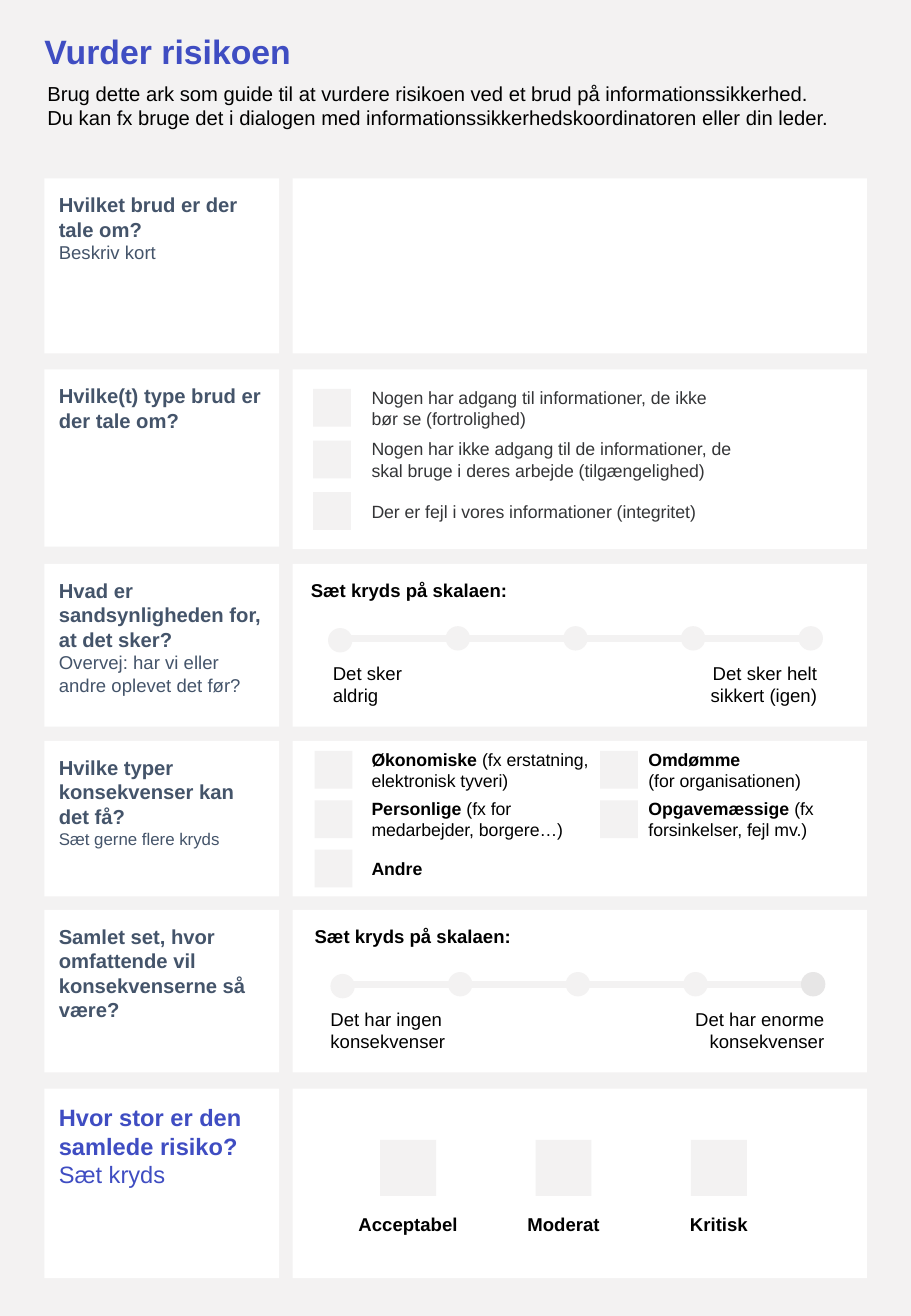
"""Builds a one-page Danish worksheet for judging the risk of a security breach."""
from lxml.etree import SubElement
from pptx import Presentation
from pptx.dml.color import RGBColor as Rgb
from pptx.enum.shapes import MSO_CONNECTOR as Link, MSO_SHAPE as Kind
from pptx.enum.text import MSO_ANCHOR as Anchor, PP_ALIGN as Align
from pptx.oxml.ns import qn
from pptx.util import Cm, Pt

HUE = {"page": "F3F2F2", "card": "FFFFFF", "blue": "3F4DC2", "slate": "44546A",
       "ink": "000000", "grey": "343537", "last": "E7E6E6"}
FONT = "Arial"
PAGE = (19.05, 27.51)
TITLE = "Vurder risikoen"
INTRO = ("Brug dette ark som guide til at vurdere risikoen ved et brud på "
         "informationssikkerhed. Du kan fx bruge det i dialogen med "
         "informationssikkerhedskoordinatoren eller din leder.")

# top, left height, right height, colour, question, size, hint, size
ROWS = [
    (3.73, 3.66, 3.66, "slate", "Hvilket brud er der tale om?", 12, "Beskriv kort", 11),
    (7.72, 3.71, 3.76, "slate", "Hvilke(t) type brud er der tale om?", 12, "", 0),
    (11.79, 3.4, 3.4, "slate", "Hvad er sandsynligheden for, at det sker?", 12,
     "Overvej: har vi eller andre oplevet det før?", 11),
    (15.49, 3.25, 3.25, "slate", "Hvilke typer konsekvenser kan det få?", 12,
     "Sæt gerne flere kryds", 10),
    (19.02, 3.4, 3.4, "slate", "Samlet set, hvor omfattende vil konsekvenserne så være?",
     12, "", 0),
    (22.76, 3.96, 3.96, "blue", "Hvor stor er den samlede risiko?", 14, "Sæt kryds", 14),
]
BREACH = [
    ("Nogen har adgang til informationer, de ikke bør se (fortrolighed)", 7.19),
    ("Nogen har ikke adgang til de informationer, de skal bruge i deres arbejde "
     "(tilgængelighed)", 8.03),
    ("Der er fejl i vores informationer (integritet)", 8.53),
]
EFFECTS = [
    (6.58, 7.77, 4.83, [
        [[("Økonomiske", True), (" (fx erstatning, elektronisk tyveri)", False)]],
        [[("Personlige", True), (" (fx for medarbejder, borgere…)", False)]],
        [[("Andre", True)]]]),
    (12.55, 13.56, 3.81, [
        [[("Omdømme", True)], [("(for organisationen)", False)]],
        [[("Opgavemæssige", True), (" (fx forsinkelser, fejl mv.)", False)]]]),
]
SCALE = "Sæt kryds på skalaen:"
# row top, first dot, heading left, low text, left, width, high text, left, last dot
SCALES = [
    (11.79, 6.86, 6.5, "Det sker aldrig", 6.96, 1.85,
     "Det sker helt sikkert (igen)", 14.25, "page"),
    (19.02, 6.91, 6.58, "Det har ingen konsekvenser", 6.91, 2.51,
     "Det har enorme konsekvenser", 14.4, "last"),
]
GRADES = ["Acceptabel", "Moderat", "Kritisk"]

deck = Presentation()
deck.slide_width, deck.slide_height = map(Cm, PAGE)
slide = deck.slides.add_slide(deck.slide_layouts[6])
slide.background.fill.solid()
slide.background.fill.fore_color.rgb = Rgb.from_string(HUE["page"])
shapes = slide.shapes


def draw(x, y, w, h, hue="page", kind=Kind.RECTANGLE):
    shape = shapes.add_shape(kind, Cm(x), Cm(y), Cm(w), Cm(h))
    shape.shadow.inherit = False
    shape.fill.solid()
    shape.fill.fore_color.rgb = Rgb.from_string(HUE[hue])
    shape.line.fill.background()
    return shape


def write(text, at=None, shape=None, size=11, hue="ink", bold=False,
          align=Align.LEFT, anchor=Anchor.TOP, inset=(0, 0, 0, 0), space=None):
    paras = [[(text, bold)]] if isinstance(text, str) else text
    frame = (shape or shapes.add_textbox(*map(Cm, at))).text_frame
    frame.word_wrap = True
    frame.vertical_anchor = anchor
    (frame.margin_left, frame.margin_top,
     frame.margin_right, frame.margin_bottom) = map(Cm, inset)
    for i, runs in enumerate(paras):
        para = frame.add_paragraph() if i else frame.paragraphs[0]
        para.alignment = align
        if space:
            para.line_spacing = space
        for words, heavy, *own in runs:
            run = para.add_run()
            run.text = words
            run.font.name = FONT
            run.font.size = Pt(own[0] if own else size)
            run.font.bold = heavy
            run.font.color.rgb = Rgb.from_string(HUE[hue])


def check(x, y, left, width, text, **form):
    side, tall = 0.79, 0.89
    draw(x, y, side, side)
    write(text, (left, y + (side - tall) / 2, width, tall), size=10.5,
          anchor=Anchor.MIDDLE, **form)


def scale(top, x, head, low, low_x, low_w, high, high_x, last):
    dot, step, count = 0.51, 2.46, 5
    write(SCALE, (head, top + 0.31, 4.7, 0.48), bold=True)
    y = Cm(top + 1.56)
    line = shapes.add_connector(Link.STRAIGHT, Cm(x + 0.1), y, Cm(x + 10.24), y)
    line.line.color.rgb = Rgb.from_string(HUE["page"])
    line.line.width = Pt(3.75)
    SubElement(line._element.spPr, qn("a:effectLst"))
    for i in range(count):
        drop = 0 if i else 0.04
        draw(x + i * step, top + 1.3 + drop, dot, dot,
             last if i == count - 1 else "page", Kind.OVAL)
    write(low, (low_x, top + 2.05, low_w, 0.94))
    write(high, (high_x, top + 2.05, 2.84, 0.94), align=Align.RIGHT)


write(TITLE, (0.93, 0.74, 17.2, 0.97), size=20, hue="blue", bold=True, space=0.9)
write(INTRO, (0.99, 1.7, 16.41, 1.02), size=12)

for top, left_h, right_h, hue, ask, size, hint, small in ROWS:
    card = draw(0.93, top, 4.91, left_h, "card")
    draw(6.12, top, 12.01, right_h, "card")
    paras = [[(ask, True, size)]] + ([[(hint, False, small)]] if hint else [])
    write(paras, shape=card, hue=hue, inset=(0.3, 0.3, 0.3, 0.51))

for i, (text, width) in enumerate(BREACH):
    check(6.55, 8.13 + i * 1.08, 7.77, width, text, hue="grey")

for x, left, width, items in EFFECTS:
    for i, text in enumerate(items):
        check(x, 15.7 + i * 1.03, left, width, text)

for row in SCALES:
    scale(*row)

for i, grade in enumerate(GRADES):
    side, wide = 1.17, 2.31
    x = 7.95 + i * 3.25
    draw(x, 23.83, side, side)
    write(grade, (x + (side - wide) / 2, 25.35, wide, 0.48), bold=True, align=Align.CENTER)

deck.save("out.pptx")
